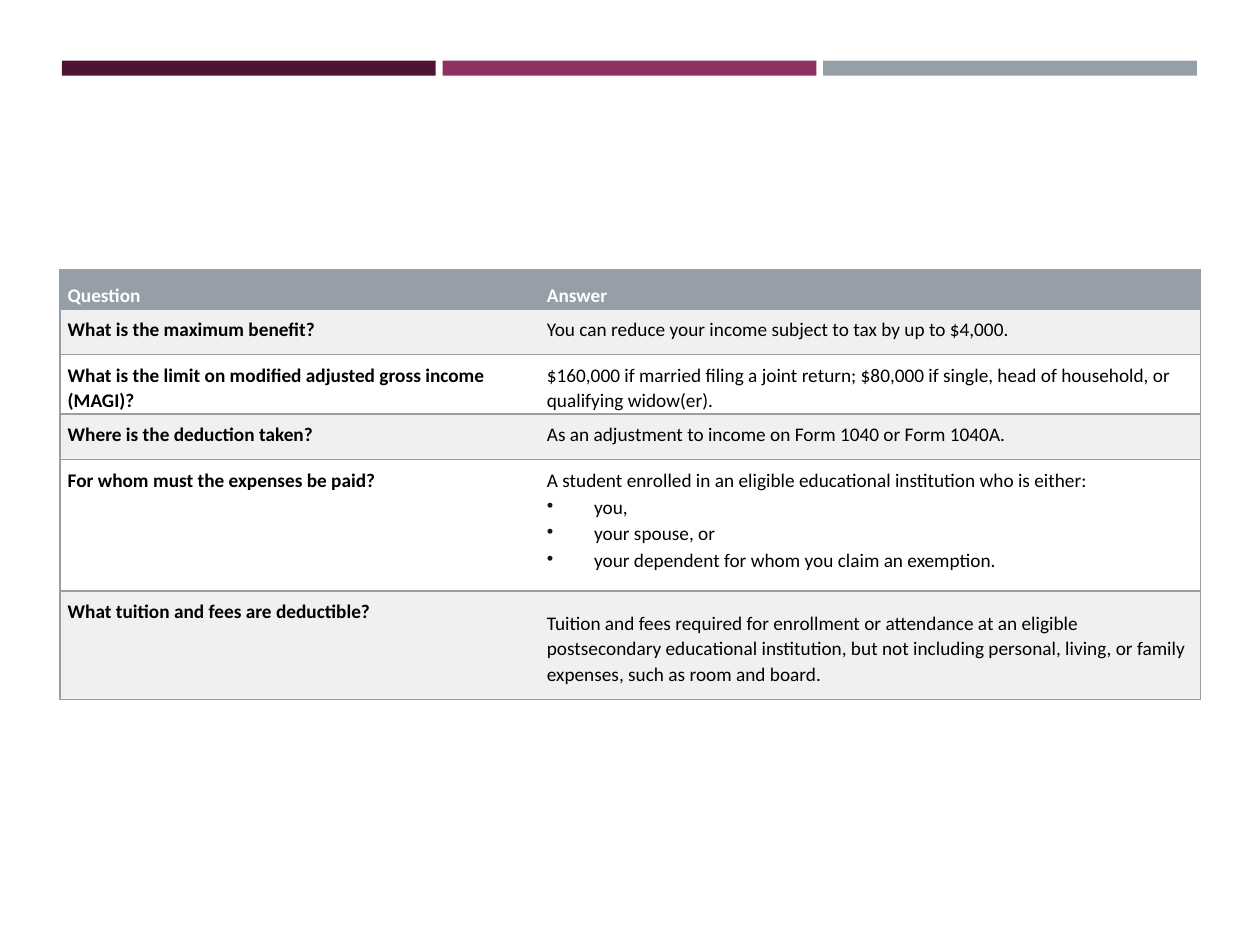
"""Build a slide with a question and answer table on the tuition and fees deduction."""
from dataclasses import dataclass

from lxml import etree
from pptx import Presentation
from pptx.dml.color import RGBColor
from pptx.enum import shapes, text
from pptx.oxml.ns import qn
from pptx.util import Pt


@dataclass(frozen=True)
class Theme:
    plum: str = "4D1434"
    magenta: str = "903163"
    grey: str = "969FA7"
    band: str = "EFF0F1"
    white: str = "FFFFFF"
    black: str = "000000"
    bullet: str = "181717"
    font: str = "Calibri"
    size: float = 11
    border: float = 1


@dataclass(frozen=True)
class Row:
    height: float
    question: str
    answer: str
    bullets: tuple[str, ...] = ()
    anchor: text.MSO_ANCHOR = text.MSO_ANCHOR.TOP


THEME = Theme()
ROWS = (
    Row(22.3, "Question", "Answer", anchor=text.MSO_ANCHOR.BOTTOM),
    Row(26.1, "What is the maximum benefit?",
        "You can reduce your income subject to tax by up to $4,000."),
    Row(32.4, "What is the limit on modified adjusted gross income (MAGI)?",
        "$160,000 if married filing a joint return; $80,000 if single, head of household, "
        "or qualifying widow(er)."),
    Row(26.1, "Where is the deduction taken?",
        "As an adjustment to income on Form 1040 or Form 1040A."),
    Row(75, "For whom must the expenses be paid?",
        "A student enrolled in an eligible educational institution who is either:",
        ("you,", "your spouse, or", "your dependent for whom you claim an exemption.")),
    Row(62, "What tuition and fees are deductible?",
        "Tuition and fees required for enrollment or attendance at an eligible postsecondary "
        "educational institution, but not including personal, living, or family expenses, "
        "such as room and board.", anchor=text.MSO_ANCHOR.MIDDLE),
)
COLUMNS = (276.5, 375.1)


def paint(fill, color: str) -> None:
    fill.solid()
    fill.fore_color.rgb = RGBColor.from_string(color)


def add_bars(slide, left: float, top: float, width: float, height: float, gap: float) -> None:
    for i, color in enumerate((THEME.plum, THEME.magenta, THEME.grey)):
        sp = slide.shapes.add_shape(shapes.MSO_SHAPE.RECTANGLE, Pt(left + i * (width + gap)),
                                    Pt(top), Pt(width), Pt(height))
        sp.shadow.inherit = False
        paint(sp.fill, color)
        sp.line.fill.background()


def set_borders(cell, hidden: str) -> None:
    tc_pr = cell._tc.get_or_add_tcPr()
    for side in ("lnL", "lnR", "lnT", "lnB"):
        ln = etree.SubElement(tc_pr, qn(f"a:{side}"), w=str(Pt(THEME.border)))
        if side == hidden:
            etree.SubElement(ln, qn("a:noFill"))
        else:
            fill = etree.SubElement(ln, qn("a:solidFill"))
            etree.SubElement(fill, qn("a:srgbClr"), val=THEME.grey)


def format_cell(cell, fill: str, anchor: text.MSO_ANCHOR, hidden: str) -> None:
    set_borders(cell, hidden)
    paint(cell.fill, fill)
    cell.vertical_anchor = anchor
    cell.margin_left, cell.margin_top = Pt(1.6), Pt(4.3)
    cell.margin_right, cell.margin_bottom = Pt(2.2), Pt(0.7)


def write(p, content: str, color: str, bold: bool, margin: float = 0, after: float = 0) -> None:
    p.line_spacing = 1.07
    p.space_after = Pt(after)
    p._p.get_or_add_pPr().set("marL", str(Pt(margin)))
    r = p.add_run()
    r.text = content
    r.font.name, r.font.size, r.font.bold = THEME.font, Pt(THEME.size), bold
    r.font.color.rgb = RGBColor.from_string(color)


def add_bullet(p, hanging: float) -> None:
    p_pr = p._p.get_or_add_pPr()
    p_pr.set("indent", str(-Pt(hanging)))
    color = etree.SubElement(p_pr, qn("a:buClr"))
    etree.SubElement(color, qn("a:srgbClr"), val=THEME.bullet)
    etree.SubElement(p_pr, qn("a:buChar"), char="•")


def fill_row(table, index: int, row: Row) -> None:
    header = index == 0
    color = THEME.white if header else THEME.black
    fill = THEME.grey if header else (THEME.white, THEME.band)[index % 2]
    table.rows[index].height = Pt(row.height)

    question, answer = table.cell(index, 0), table.cell(index, 1)
    question_anchor = row.anchor if header else text.MSO_ANCHOR.TOP
    format_cell(question, fill, question_anchor, hidden="lnR")
    format_cell(answer, fill, row.anchor, hidden="lnL")

    write(question.text_frame.paragraphs[0], row.question, color, True, margin=2.7)
    tf = answer.text_frame
    write(tf.paragraphs[0], row.answer, color, header, after=0.8 if row.bullets else 0)
    for item in row.bullets:
        p = tf.add_paragraph()
        after = 0 if item == row.bullets[-1] else 0.8
        write(p, item, color, False, margin=27, after=after)
        add_bullet(p, hanging=27)


def add_answers(slide, left: float, top: float) -> None:
    height = sum(row.height for row in ROWS)
    table = slide.shapes.add_table(len(ROWS), len(COLUMNS), Pt(left), Pt(top),
                                   Pt(sum(COLUMNS)), Pt(height)).table
    table.first_row = table.horz_banding = False
    for column, width in zip(table.columns, COLUMNS):
        column.width = Pt(width)
    for index, row in enumerate(ROWS):
        fill_row(table, index, row)


def main() -> None:
    prs = Presentation()
    prs.slide_width, prs.slide_height = Pt(720), Pt(540)
    slide = prs.slides.add_slide(prs.slide_layouts[6])
    add_bars(slide, left=35.4, top=34.7, width=213.6, height=8.5, gap=3.9)
    add_answers(slide, left=34.4, top=154.2)
    prs.save("out.pptx")


if __name__ == "__main__":
    main()
